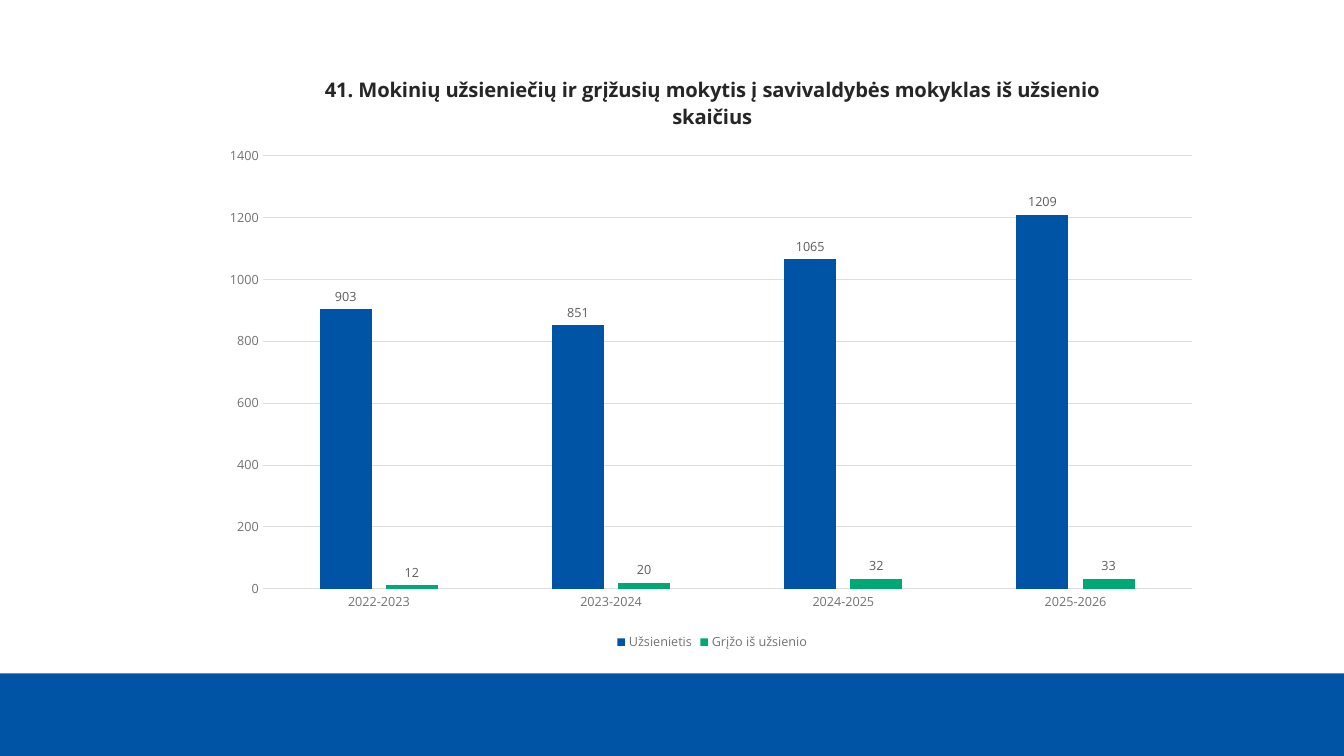
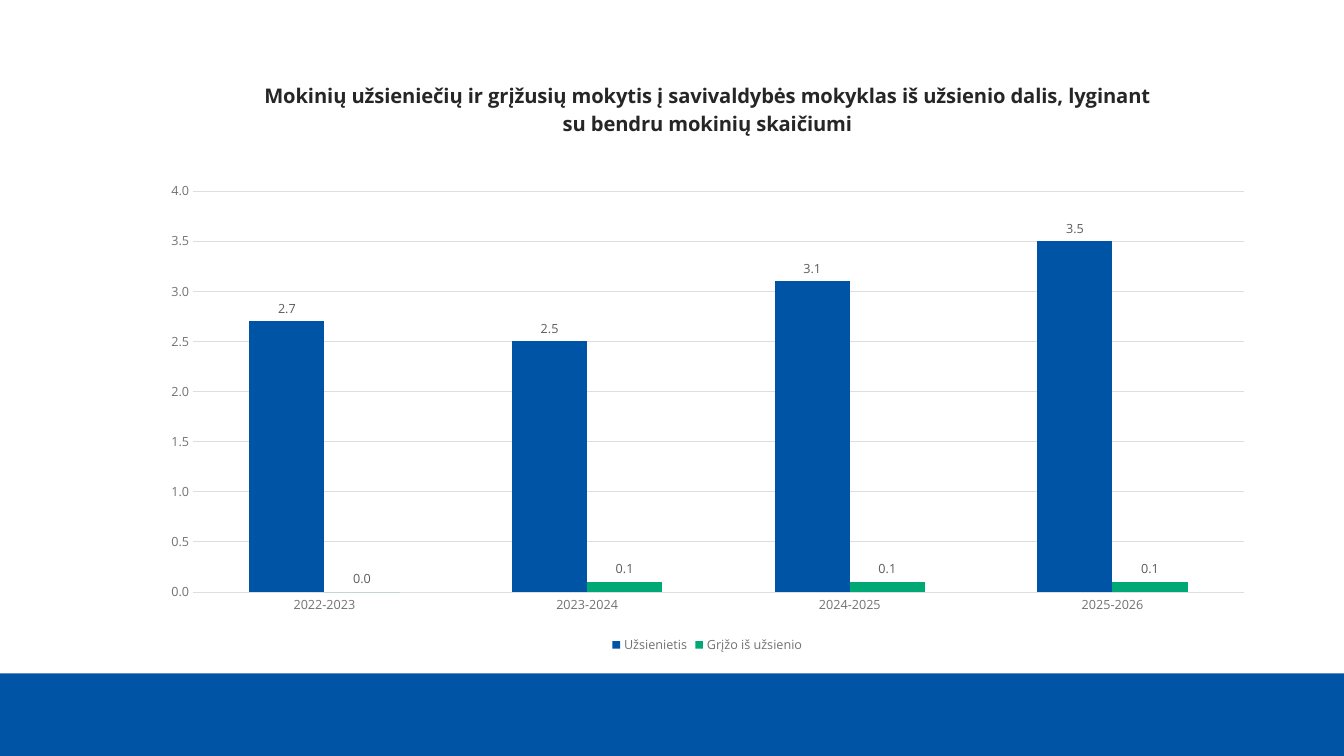
from dataclasses import dataclass

from pptx import Presentation
from pptx.chart import data as cd
from pptx.dml.color import RGBColor
from pptx.enum import chart as ce
from pptx.enum import shapes as es
from pptx.oxml import parse_xml
from pptx.oxml.ns import nsdecls
from pptx.util import Pt

FONT = "Open Sans"
BLUE = RGBColor(0x00, 0x54, 0xA5)
GREEN = RGBColor(0x00, 0xA8, 0x75)
INK = RGBColor(0x26, 0x26, 0x26)
AXIS_GRAY = RGBColor(0x72, 0x72, 0x72)
LABEL_GRAY = RGBColor(0x5C, 0x5C, 0x5C)
GRID_GRAY = RGBColor(0xDE, 0xDE, 0xDE)

SLIDE_W, SLIDE_H, BAND_H = 960, 540, 59
YEARS = ("2022-2023", "2023-2024", "2024-2025", "2025-2026")


@dataclass(frozen=True)
class ColumnChart:
    title: str
    box: tuple[float, float, float, float]   # left, top, width, height in points
    plot: tuple[float, float, float, float]  # x, y, w, h as shares of the chart
    foreign: tuple[float, ...]
    returned: tuple[float, ...]
    top: float
    step: float
    fmt: str
    gap: int
    overlap: int
    base_line: bool


CHARTS = (
    ColumnChart(
        "41. Mokinių užsieniečių ir grįžusių mokytis į savivaldybės mokyklas "
        "iš užsienio skaičius",
        (152, 38, 713.5, 430), (0.05, 0.17, 0.93, 0.72),
        (903, 851, 1065, 1209), (12, 20, 32, 33),
        1400, 200, "General", 219, -27, True),
    ColumnChart(
        "Mokinių užsieniečių ir grįžusių mokytis į savivaldybės mokyklas "
        "iš užsienio dalis, lyginant su bendru mokinių skaičiumi",
        (106, 42.5, 798.5, 427.5), (0.04, 0.22, 0.94, 0.67),
        (2.7, 2.5, 3.1, 3.5), (0, 0.1, 0.1, 0.1),
        4, 0.5, "0.0", 150, 0, False),
)


def style_font(font, size: float, color: RGBColor, bold: bool = False) -> None:
    font.name, font.size, font.bold = FONT, Pt(size), bold
    font.color.rgb = color


def style_line(line, color: RGBColor) -> None:
    line.color.rgb = color
    line.width = Pt(0.75)


def place_plot(chart, plot: tuple[float, float, float, float]) -> None:
    """Fix the inner plot area, which python-pptx leaves automatic."""
    area = chart.element.xpath(".//c:plotArea")[0]
    for old in area.xpath("./c:layout"):
        area.remove(old)
    sizes = "".join(f'<c:{k} val="{v}"/>' for k, v in zip("xywh", plot))
    area.insert(0, parse_xml(
        f'<c:layout {nsdecls("c")}><c:manualLayout>'
        '<c:layoutTarget val="inner"/><c:xMode val="edge"/><c:yMode val="edge"/>'
        f'{sizes}</c:manualLayout></c:layout>'))


def add_band(s, layout) -> None:
    """Draw the bottom band and move it to the shared layout."""
    sp = s.shapes.add_shape(es.MSO_SHAPE.RECTANGLE, Pt(0), Pt(SLIDE_H - BAND_H),
                            Pt(SLIDE_W), Pt(BAND_H))
    sp.shadow.inherit = False
    sp.fill.solid()
    sp.fill.fore_color.rgb = BLUE
    sp.line.fill.background()
    layout.shapes.element.append(sp.element)


def add_column_chart(s, c: ColumnChart) -> None:
    data = cd.CategoryChartData(number_format=c.fmt)
    data.categories = YEARS
    data.add_series("Užsienietis", c.foreign)
    data.add_series("Grįžo iš užsienio", c.returned)
    chart = s.shapes.add_chart(ce.XL_CHART_TYPE.COLUMN_CLUSTERED,
                               *map(Pt, c.box), data).chart
    style_font(chart.font, 10, INK)
    place_plot(chart, c.plot)

    # Title and legend
    chart.has_title = True
    tf = chart.chart_title.text_frame
    tf.text = c.title
    style_font(tf.paragraphs[0].runs[0].font, 14.4, INK, bold=True)
    chart.has_legend = True
    chart.legend.position = ce.XL_LEGEND_POSITION.BOTTOM
    chart.legend.include_in_layout = False
    style_font(chart.legend.font, 9, AXIS_GRAY)

    # Axes
    cat, val = chart.category_axis, chart.value_axis
    for axis in (cat, val):
        axis.major_tick_mark = axis.minor_tick_mark = ce.XL_TICK_MARK.NONE
        style_font(axis.tick_labels.font, 9, AXIS_GRAY)
        axis.format.line.fill.background()
    if c.base_line:
        style_line(cat.format.line, GRID_GRAY)
    val.minimum_scale, val.maximum_scale, val.major_unit = 0, c.top, c.step
    val.tick_labels.number_format = c.fmt
    val.tick_labels.number_format_is_linked = False
    val.has_major_gridlines = True
    style_line(val.major_gridlines.format.line, GRID_GRAY)

    # Columns and their values
    plot = chart.plots[0]
    plot.gap_width, plot.overlap = c.gap, c.overlap
    plot.vary_by_categories = False
    for series, color in zip(plot.series, (BLUE, GREEN)):
        series.format.fill.solid()
        series.format.fill.fore_color.rgb = color
        series.invert_if_negative = False
        labels = series.data_labels
        labels.show_value = True
        labels.position = ce.XL_LABEL_POSITION.OUTSIDE_END
        labels.number_format = c.fmt
        labels.number_format_is_linked = False
        style_font(labels.font, 9, LABEL_GRAY)


def main() -> None:
    prs = Presentation()
    prs.slide_width, prs.slide_height = Pt(SLIDE_W), Pt(SLIDE_H)
    layout = prs.slide_layouts[6]
    slides = [prs.slides.add_slide(layout) for _ in CHARTS]
    add_band(slides[0], layout)
    for s, c in zip(slides, CHARTS):
        add_column_chart(s, c)
    prs.save("out.pptx")


if __name__ == "__main__":
    main()
